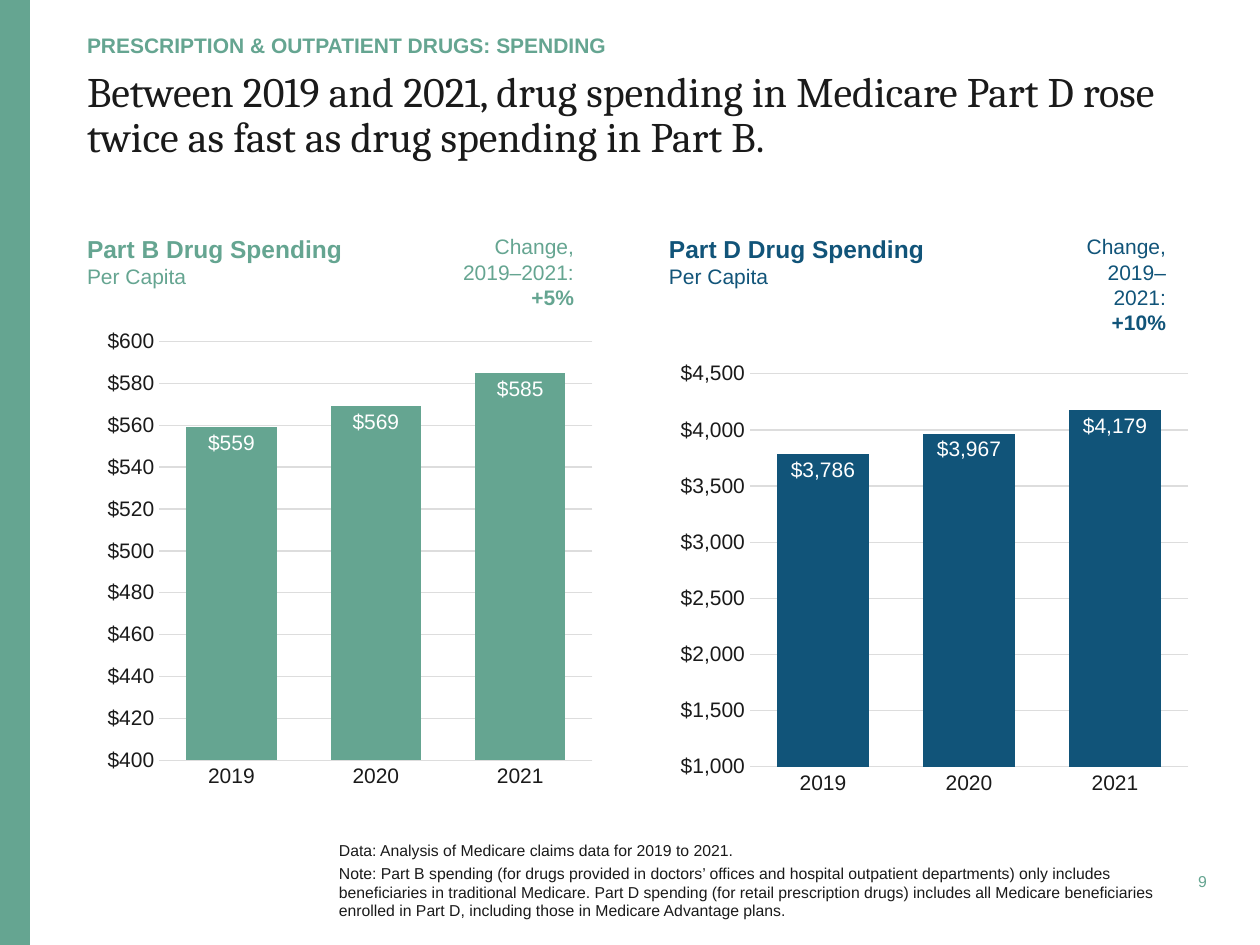
from lxml import etree
from pptx import Presentation
from pptx.chart.data import CategoryChartData
from pptx.dml.color import RGBColor
from pptx.enum.chart import XL_CHART_TYPE, XL_LABEL_POSITION, XL_TICK_MARK
from pptx.enum.shapes import MSO_SHAPE
from pptx.enum.text import MSO_ANCHOR, PP_ALIGN
from pptx.oxml import parse_xml
from pptx.util import Emu, Pt

PX = 914400 / 126
GREEN, BLUE, INK, GRID, WHITE = "65A591", "115479", "1A1A1A", "DDDDDD", "FFFFFF"
TOP, MIDDLE, BOTTOM = MSO_ANCHOR.TOP, MSO_ANCHOR.MIDDLE, MSO_ANCHOR.BOTTOM
LEFT, RIGHT = PP_ALIGN.LEFT, PP_ALIGN.RIGHT
CHART_NS = "http://schemas.openxmlformats.org/drawingml/2006/chart"
DOLLARS = '"$"#,##0'


def px(*lengths):
    return [Emu(round(length * PX)) for length in lengths]


def add_text(box, lines, color, font="Arial", anchor=TOP, align=LEFT,
             insets=(0, 0, 0, 0), wrap=True):
    """Add a text box; each line is (text, size, bold). Returns its paragraphs."""
    frame = slide.shapes.add_textbox(*px(*box)).text_frame
    frame.word_wrap = wrap
    frame.vertical_anchor = anchor
    (frame.margin_left, frame.margin_top,
     frame.margin_right, frame.margin_bottom) = px(*insets)
    for i, (text, size, bold) in enumerate(lines):
        paragraph = frame.add_paragraph() if i else frame.paragraphs[0]
        paragraph.text = text
        paragraph.alignment = align
        paragraph.font.name = font
        paragraph.font.size = Pt(size)
        paragraph.font.bold = bold
        paragraph.font.color.rgb = RGBColor.from_string(color)
    return frame.paragraphs


prs = Presentation()
prs.slide_width, prs.slide_height = px(1260, 945)
slide = prs.slides.add_slide(prs.slide_layouts[6])

side_band = slide.shapes.add_shape(MSO_SHAPE.RECTANGLE, *px(0, 0, 30, 945))
side_band.shadow.inherit = False
side_band.fill.solid()
side_band.fill.fore_color.rgb = RGBColor.from_string(GREEN)
side_band.line.fill.background()

add_text((87, 24, 1091, 34), [("PRESCRIPTION & OUTPATIENT DRUGS: SPENDING", 12, True)],
         GREEN, anchor=BOTTOM)
title = add_text((87, 71, 1115, 101), [(
    "Between 2019 and 2021, drug spending in Medicare Part D rose "
    "twice as fast as drug spending in Part B.", 24, False)], INK, font="Cambria")
title[0].line_spacing = 0.9

# heading, colour, heading left, change box, change, chart box, plot area, values, axis
panels = [
    ("Part B Drug Spending", GREEN, 87, (354, 228, 233, 89), "+5%",
     (81, 202, 522, 607), (0.15, 0.23, 0.83, 0.69), (559, 569, 585), (400, 600, 20)),
    ("Part D Drug Spending", BLUE, 669, (970, 228, 209, 89), "+10%",
     (658, 202, 541, 614), (0.17, 0.28, 0.81, 0.64), (3786, 3967, 4179), (1000, 4500, 500)),
]
for heading, color, left, change_box, change, chart_box, plot_area, values, axis in panels:
    data = CategoryChartData(number_format=DOLLARS)
    data.categories = ["2019", "2020", "2021"]
    data.add_series(heading, values)
    chart = slide.shapes.add_chart(
        XL_CHART_TYPE.COLUMN_CLUSTERED, *px(*chart_box), data).chart
    chart.has_legend = False
    chart.has_title = False
    chart.font.name = "Arial"
    chart.font.size = Pt(12)
    chart.font.color.rgb = RGBColor.from_string(INK)

    years, dollars = chart.category_axis, chart.value_axis
    years.major_tick_mark = dollars.major_tick_mark = XL_TICK_MARK.NONE
    dollars.minimum_scale, dollars.maximum_scale, dollars.major_unit = axis
    dollars.tick_labels.number_format = DOLLARS
    dollars.tick_labels.number_format_is_linked = False
    dollars.format.line.fill.background()
    for line in (years.format.line, dollars.major_gridlines.format.line):
        line.color.rgb = RGBColor.from_string(GRID)
        line.width = Pt(0.75)

    plot = chart.plots[0]
    plot.gap_width = 60
    plot.vary_by_categories = False
    bars = plot.series[0].format.fill
    bars.solid()
    bars.fore_color.rgb = RGBColor.from_string(color)
    plot.has_data_labels = True
    labels = plot.data_labels
    labels.show_value = True
    labels.position = XL_LABEL_POSITION.INSIDE_END
    labels.number_format = DOLLARS
    labels.number_format_is_linked = False
    labels.font.name = "Arial"
    labels.font.size = Pt(12)
    labels.font.color.rgb = RGBColor.from_string(WHITE)

    area = chart.element.find(f".//{{{CHART_NS}}}plotArea")
    for old_layout in area.findall(f"{{{CHART_NS}}}layout"):
        area.remove(old_layout)
    layout = parse_xml(f'<c:layout xmlns:c="{CHART_NS}"><c:manualLayout/></c:layout>')
    settings = [("layoutTarget", "inner"), ("xMode", "edge"), ("yMode", "edge"),
                *zip("xywh", plot_area)]
    for tag, value in settings:
        etree.SubElement(layout[0], f"{{{CHART_NS}}}{tag}", val=str(value))
    area.insert(0, layout)

    add_text((left, 228, 272, 68), [(heading, 14, True), ("Per Capita", 12, False)],
             color, insets=(0, 6, 13, 6))
    note = add_text(change_box, [("Change, 2019–2021:", 12, None)], color,
                    align=RIGHT, insets=(86, 6, 13, 6))[0]
    note.add_line_break()
    change_run = note.add_run()
    change_run.text = change
    change_run.font.bold = True

footnotes = add_text((339, 827, 830, 107), [
    ("Data: Analysis of Medicare claims data for 2019 to 2021.", 9, False),
    ("Note: Part B spending (for drugs provided in doctors’ offices and hospital "
     "outpatient departments) only includes beneficiaries in traditional Medicare. "
     "Part D spending (for retail prescription drugs) includes all Medicare "
     "beneficiaries enrolled in Part D, including those in Medicare Advantage plans.",
     9, False)], INK, anchor=MIDDLE)
footnotes[1].space_before = Pt(2)
add_text((1168, 867, 39, 28), [("9", 9, False)], GREEN, anchor=MIDDLE,
         align=RIGHT, wrap=False)

prs.save("out.pptx")
